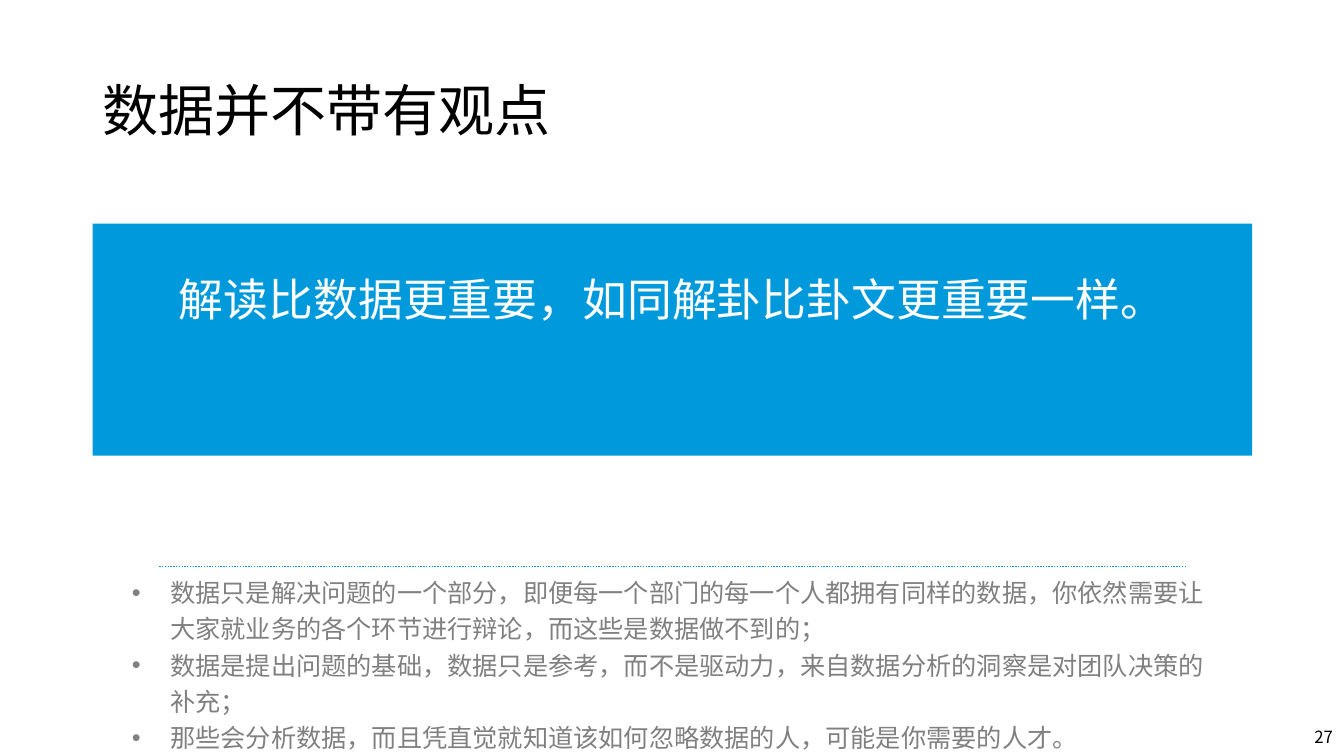
from lxml import etree
from pptx import Presentation
from pptx.dml.color import RGBColor
from pptx.enum.dml import MSO_LINE
from pptx.enum.shapes import MSO_CONNECTOR, MSO_SHAPE
from pptx.enum.text import MSO_ANCHOR, PP_ALIGN
from pptx.oxml.ns import qn
from pptx.util import Inches, Pt

# Content
TITLE = "数据并不带有观点"
BANNER = "解读比数据更重要，如同解卦比卦文更重要一样。"
POINTS = [
    "数据只是解决问题的一个部分，即便每一个部门的每一个人都拥有同样的数据，你依然需要让大家就业务的各个环节进行辩论，而这些是数据做不到的；",
    "数据是提出问题的基础，数据只是参考，而不是驱动力，来自数据分析的洞察是对团队决策的补充；",
    "那些会分析数据，而且凭直觉就知道该如何忽略数据的人，可能是你需要的人才。",
]
PAGE = "27"

# Theme
THEME = {
    "font": "Arial", "cjk": "Noto Sans CJK SC",
    "blue": RGBColor(0x00, 0x9A, 0xDC), "gray": RGBColor(0x80, 0x80, 0x80),
    "black": RGBColor(0, 0, 0), "white": RGBColor(255, 255, 255),
    "title": 40, "banner": 32, "body": 18, "page": 12,
}

# Layout in inches: left, top, width, height
SLIDE_W, SLIDE_H = 13.33, 7.5
MARGIN = 0.92
TITLE_BOX = (MARGIN, 0.4, 11.93, 1.45)
BANNER_BOX = (MARGIN, 2.22, 11.5, 2.3)
RULE_Y = 5.62
RULE_X = (1.58, 11.75)
POINTS_BOX = (1.21, RULE_Y, 11.02, 1.92)
PAGE_BOX = (10.32, 7.11, 3, 0.4)
HANG = Inches(0.38)


def write(sp, lines, size, color, spacing=1.0, align=PP_ALIGN.LEFT,
          anchor=MSO_ANCHOR.TOP, bullet=None, font=THEME["font"]):
    tf = sp.text_frame
    tf.word_wrap = True
    tf.vertical_anchor = anchor
    tf.text = "\n".join(lines)
    for p in tf.paragraphs:
        p.alignment = align
        p.line_spacing = spacing
        if bullet:
            pPr = p._p.get_or_add_pPr()
            pPr.set("marL", str(HANG))
            pPr.set("indent", str(-HANG))
            etree.SubElement(pPr, qn("a:buFont")).set("typeface", THEME["font"])
            etree.SubElement(pPr, qn("a:buChar")).set("char", bullet)
        for r in p.runs:
            r.font.size = Pt(size)
            r.font.name = font
            r.font.color.rgb = color
            ea = etree.SubElement(r._r.get_or_add_rPr(), qn("a:ea"))
            ea.set("typeface", THEME["cjk"])


def add_text(slide, box, *args, **kwargs):
    write(slide.shapes.add_textbox(*map(Inches, box)), *args, **kwargs)


prs = Presentation()
prs.slide_width, prs.slide_height = Inches(SLIDE_W), Inches(SLIDE_H)
slide = prs.slides.add_slide(prs.slide_layouts[6])

# Title and page number
add_text(slide, TITLE_BOX, [TITLE], THEME["title"], THEME["black"],
         spacing=0.9, anchor=MSO_ANCHOR.MIDDLE)
add_text(slide, PAGE_BOX, [PAGE], THEME["page"], THEME["black"],
         align=PP_ALIGN.RIGHT, anchor=MSO_ANCHOR.MIDDLE, font=THEME["cjk"])

# Bulleted points
add_text(slide, POINTS_BOX, POINTS, THEME["body"], THEME["gray"],
         spacing=1.2, bullet="•")

# Banner
banner = slide.shapes.add_shape(MSO_SHAPE.RECTANGLE, *map(Inches, BANNER_BOX))
banner.shadow.inherit = False
banner.fill.solid()
banner.fill.fore_color.rgb = THEME["blue"]
banner.line.fill.background()
write(banner, [BANNER], THEME["banner"], THEME["white"],
      spacing=1.8, align=PP_ALIGN.CENTER)

# Dotted rule above the points
rule = slide.shapes.add_connector(
    MSO_CONNECTOR.STRAIGHT, Inches(RULE_X[0]), Inches(RULE_Y),
    Inches(RULE_X[1]), Inches(RULE_Y))
rule.line.color.rgb = THEME["blue"]
rule.line.width = Pt(1)
rule.line.dash_style = MSO_LINE.ROUND_DOT
etree.SubElement(rule._element.spPr, qn("a:effectLst"))

prs.save("out.pptx")
